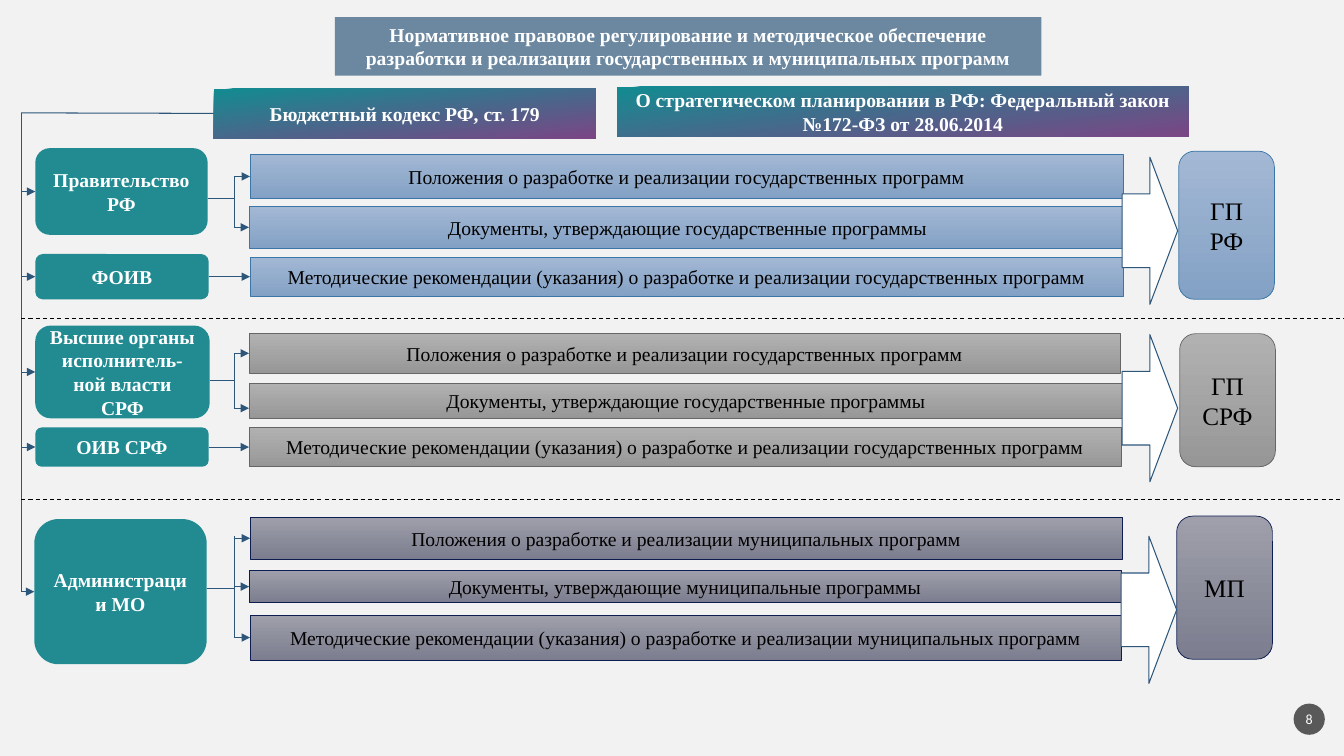
from lxml import etree
from pptx import Presentation
from pptx.dml.color import RGBColor
from pptx.enum.dml import MSO_LINE
from pptx.enum.shapes import MSO_CONNECTOR, MSO_SHAPE
from pptx.enum.text import MSO_ANCHOR, MSO_AUTO_SIZE, PP_ALIGN
from pptx.oxml.ns import qn
from pptx.util import Inches, Pt

RECT, ROUND = MSO_SHAPE.RECTANGLE, MSO_SHAPE.ROUNDED_RECTANGLE
ARROW, OVAL = MSO_SHAPE.RIGHT_ARROW, MSO_SHAPE.OVAL
STRAIGHT = MSO_CONNECTOR.STRAIGHT
DASH = MSO_LINE.DASH
CENTER, MIDDLE = PP_ALIGN.CENTER, MSO_ANCHOR.MIDDLE
NO_FIT = MSO_AUTO_SIZE.NONE
LEFT_SIDE, RIGHT_SIDE = 1, 3

COLORS = {
    "page": "F2F2F2", "title": "6C88A0", "actor": "218B91", "number": "595959",
    "white": "FFFFFF", "black": "000000", "link": "2C567A",
    "law_top": "128C91", "law_bottom": "7A4684",
    "federal_top": "A3B8D4", "federal_bottom": "83A1C5", "federal_edge": "3C76A6",
    "regional_top": "B1B1B1", "regional_bottom": "979797", "regional_edge": "666666",
    "local_top": "9E9FAA", "local_bottom": "7C7D8E", "local_edge": "0D1D51",
}
SERIF = "Times New Roman"
TRUNK_X, BRANCH_X = 0.21, 2.32

STATE_RULES = "Положения о разработке и реализации государственных программ"
STATE_ACTS = "Документы, утверждающие государственные программы"
STATE_GUIDES = ("Методические рекомендации (указания) о разработке и реализации "
                "государственных программ")
LOCAL_RULES = "Положения о разработке и реализации муниципальных программ"
LOCAL_ACTS = "Документы, утверждающие муниципальные программы"
LOCAL_GUIDES = ("Методические рекомендации (указания) о разработке и реализации "
                "муниципальных программ")

LEVELS = [
    {"palette": "federal",
     "bars": [(STATE_RULES, (2.48, 1.53, 8.66, 0.44), 1.75),
              (STATE_ACTS, (2.47, 2.05, 8.7, 0.41), 2.26),
              (STATE_GUIDES, (2.48, 2.55, 8.66, 0.39), 2.75)],
     "actor": ("Правительство РФ", (0.35, 1.47, 1.71, 0.86), 1.97),
     "agency": ("ФОИВ", (0.35, 2.52, 1.72, 0.45)),
     "result": ("ГП РФ", (11.69, 1.5, 0.95, 1.47)),
     "arrow": (11.13, 1.56)},
    {"palette": "regional",
     "bars": [(STATE_RULES, (2.47, 3.31, 8.64, 0.39), 3.5),
              (STATE_ACTS, (2.47, 3.8, 8.67, 0.35), 4.05),
              (STATE_GUIDES, (2.47, 4.24, 8.65, 0.39), 4.42)],
     "actor": ("Высшие органы исполнитель-ной власти СРФ", (0.35, 3.23, 1.73, 0.92), 3.77),
     "agency": ("ОИВ СРФ", (0.35, 4.24, 1.72, 0.39)),
     "result": ("ГП СРФ", (11.7, 3.31, 0.95, 1.32)),
     "arrow": (11.13, 3.32)},
    {"palette": "local",
     "bars": [(LOCAL_RULES, (2.48, 5.13, 8.65, 0.42), 5.32),
              (LOCAL_ACTS, (2.47, 5.66, 8.65, 0.32), 5.84),
              (LOCAL_GUIDES, (2.48, 6.1, 8.64, 0.45), 6.32)],
     "actor": ("Администрации МО", (0.34, 5.15, 1.71, 1.44), 5.84),
     "agency": None,
     "result": ("МП", (11.67, 5.12, 0.95, 1.42)),
     "arrow": (11.12, 5.32)},
]


def color(name):
    return RGBColor.from_string(COLORS[name])


def write(box, text, size, ink, bold=False, font=SERIF):
    frame = box.text_frame
    frame.word_wrap = True
    frame.auto_size = NO_FIT
    frame.vertical_anchor = MIDDLE
    para = frame.paragraphs[0]
    para.text = text
    para.alignment = CENTER
    para.font.name = font
    para.font.size = Pt(size)
    para.font.bold = bold
    para.font.color.rgb = color(ink)


def paint(box, fill):
    box.fill.solid()
    box.fill.fore_color.rgb = color(fill)


def shade(box, palette, angle):
    box.fill.gradient()
    box.fill.gradient_angle = 360 - angle
    for stop, end in zip(box.fill.gradient_stops, ("top", "bottom")):
        stop.color.rgb = color(f"{palette}_{end}")


def outline(box, ink, width):
    box.line.color.rgb = color(ink)
    box.line.width = Pt(width)


def add_box(page, kind, place):
    box = page.shapes.add_shape(kind, *map(Inches, place))
    box.shadow.inherit = False
    box.line.fill.background()
    return box


def add_actor(page, text, place):
    actor = add_box(page, ROUND, place)
    paint(actor, "actor")
    write(actor, text, 14, "white", bold=True)
    add_link(page, (TRUNK_X, middle(place)), (place[0], middle(place)),
             head=True, target=actor)
    return actor


def add_level_box(page, kind, text, place, palette, size):
    box = add_box(page, kind, place)
    shade(box, palette, 90)
    outline(box, f"{palette}_edge", 0.5)
    write(box, text, size, "black")
    return box


def add_law(page, text, place):
    law = add_box(page, RECT, place)
    shade(law, "law", 83)
    write(law, text, 14, "white", bold=True)
    return law


def middle(place):
    return place[1] + place[3] / 2


def add_link(page, start, end, ink="link", width=0.5, head=False, source=None, target=None):
    link = page.shapes.add_connector(STRAIGHT, *map(Inches, (*start, *end)))
    outline(link, ink, width)
    if head:
        etree.SubElement(link.line._get_or_add_ln(), qn("a:tailEnd"), type="triangle")
    etree.SubElement(link._element.spPr, qn("a:effectLst"))
    if source is not None:
        link.begin_connect(*source)
    if target is not None:
        link.end_connect(target, LEFT_SIDE)
    return link


def add_branch(page, bar, place, y):
    centred = abs(y - middle(place)) < 0.03
    if centred:
        y = middle(place)
    add_link(page, (BRANCH_X, y), (place[0], y), head=True, target=bar if centred else None)


def add_level(page, level):
    palette = level["palette"]
    bars = [add_level_box(page, RECT, text, place, palette, 14)
            for text, place, _ in level["bars"]]
    add_level_box(page, ROUND, *level["result"], palette, 18)
    arrow = add_box(page, ARROW, (*level["arrow"], 0.55, 1.46))
    paint(arrow, "white")
    outline(arrow, "link", 0.75)

    text, place, stem_y = level["actor"]
    add_actor(page, text, place)
    add_link(page, (place[0] + place[2], stem_y), (BRANCH_X, stem_y))
    branches = list(zip(bars, level["bars"]))
    if level["agency"]:
        agency = add_actor(page, *level["agency"])
        guide, (_, guide_place, y) = branches.pop()
        agency_place = level["agency"][1]
        add_link(page, (agency_place[0] + agency_place[2], y), (guide_place[0], y),
                 head=True, source=(agency, RIGHT_SIDE), target=guide)
    for bar, (_, bar_place, y) in branches:
        add_branch(page, bar, bar_place, y)
    add_link(page, (BRANCH_X, branches[0][1][2]), (BRANCH_X, branches[-1][1][2]))


def add_title(page):
    title = page.shapes.title
    title.left, title.top, title.width, title.height = map(Inches, (3.32, 0.17, 7.01, 0.58))
    paint(title, "title")
    write(title, "Нормативное правовое регулирование и методическое обеспечение разработки "
          "и реализации государственных и муниципальных программ", 14, "white", bold=True)


def add_page_number(page):
    badge = add_box(page, OVAL, (12.83, 6.98, 0.31, 0.31))
    paint(badge, "number")
    write(badge, "8", 10, "white", font="Calibri")
    frame = badge.text_frame
    frame.margin_left = frame.margin_right = frame.margin_top = frame.margin_bottom = 0


def main():
    deck = Presentation()
    deck.slide_width, deck.slide_height = Inches(13.33), Inches(7.5)
    page = deck.slides.add_slide(deck.slide_layouts[5])
    paint(page.background, "page")
    add_title(page)
    code = add_law(page, "Бюджетный кодекс РФ, ст. 179", (2.12, 0.88, 3.79, 0.49))
    add_law(page, "О стратегическом планировании в РФ: Федеральный закон №172-ФЗ от 28.06.2014",
            (6.12, 0.86, 5.67, 0.49))
    add_link(page, (2.12, 1.12), (TRUNK_X, 1.12), width=0.75, source=(code, LEFT_SIDE))
    add_link(page, (TRUNK_X, 1.12), (TRUNK_X, 5.86), width=0.75)
    for level in LEVELS:
        add_level(page, level)
    for y, right in ((3.16, 13.33), (4.96, 13.29)):
        divider = add_link(page, (TRUNK_X, y), (right, y), ink="black", width=0.75)
        divider.line.dash_style = DASH
    add_page_number(page)
    deck.save("out.pptx")


if __name__ == "__main__":
    main()
